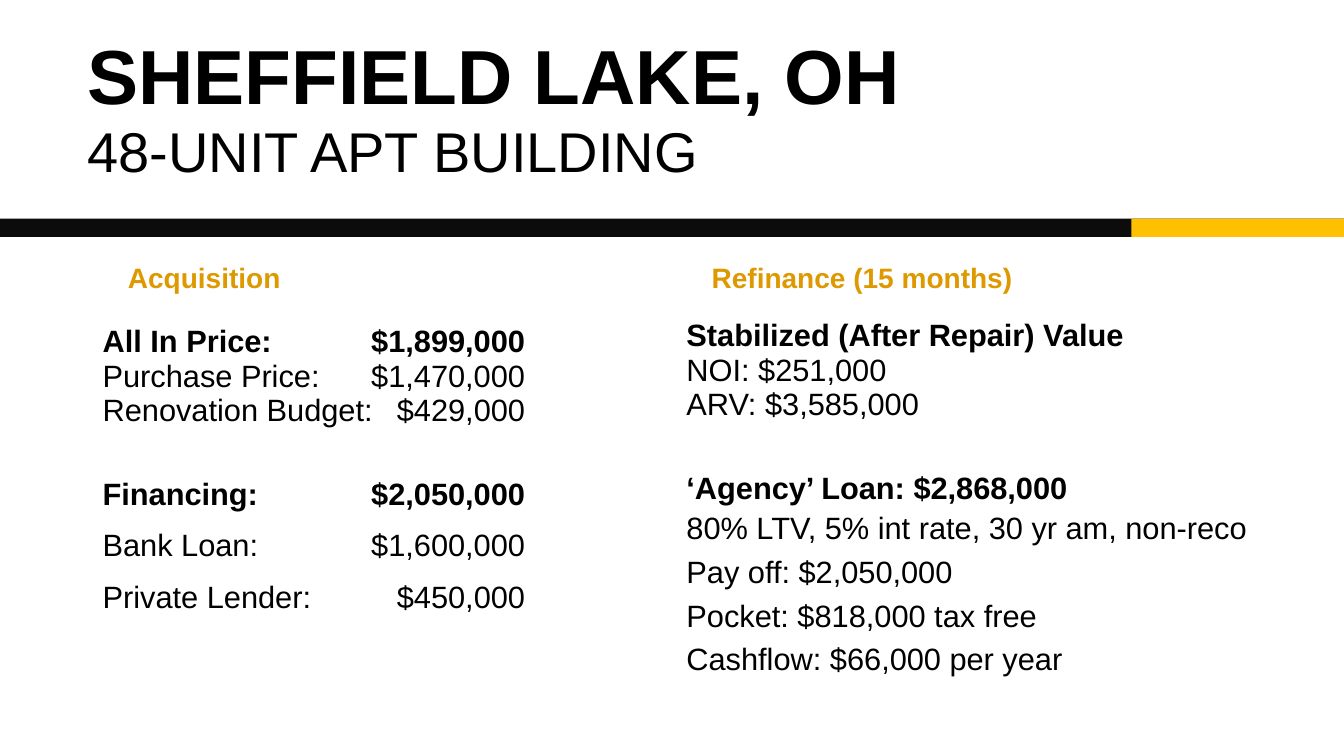
"""Build the apartment acquisition and refinance slide."""
import pptx
import pptx.dml.color
import pptx.enum.shapes
import pptx.enum.text
import pptx.oxml
import pptx.oxml.ns
import pptx.util

Inches = pptx.util.Inches
Pt = pptx.util.Pt
BLACK = pptx.dml.color.RGBColor(0x00, 0x00, 0x00)
CHARCOAL = pptx.dml.color.RGBColor(0x0C, 0x0C, 0x0C)
GOLD = pptx.dml.color.RGBColor(0xDE, 0x99, 0x00)
AMBER = pptx.dml.color.RGBColor(0xFF, 0xC0, 0x00)

TITLE = [("SHEFFIELD LAKE, OH", True, 0, 54.7), ("48-UNIT APT BUILDING", False, 0, 40)]
ACQUISITION = [
    ("All In Price:\t$1,899,000", True, 0),
    ("Purchase Price:\t$1,470,000", False, 0),
    ("Renovation Budget:\t$429,000", False, 0),
    ("Financing:\t$2,050,000", True, 35.5),
    ("Bank Loan:\t$1,600,000", False, 12),
    ("Private Lender:\t$450,000", False, 12),
]
REFINANCE = [
    ("Stabilized (After Repair) Value", True, 0),
    ("NOI: $251,000", False, 0),
    ("ARV: $3,585,000", False, 0),
    ("‘Agency’ Loan: $2,868,000", True, 35.5),
    ("80% LTV, 5% int rate, 30 yr am, non-reco", False, 4),
    ("Pay off: $2,050,000", False, 6.7),
    ("Pocket: $818,000 tax free", False, 6.7),
    ("Cashflow: $66,000 per year", False, 6.7),
]
COLUMNS = [
    ("Acquisition", ACQUISITION, 0.92, 3.18, 5.2, 3.6),
    ("Refinance (15 months)", REFINANCE, 6.71, 3.12, 6.62, 4.24),
]
BARS = [(0, 13.33, CHARCOAL), (11.22, 2.11, AMBER)]
BAR_TOP, BAR_HEIGHT = 2.17, 0.18
HEADING_INDENT = 0.25
AMOUNT_EDGE = 4.19


def add_text(slide, lines, box, size=22, color=BLACK, middle=False, spacing=0.93):
    """Add a text box holding (text, bold, space before[, size]) lines."""
    frame = slide.shapes.add_textbox(*map(Inches, box)).text_frame
    frame.word_wrap = True
    anchor = pptx.enum.text.MSO_ANCHOR
    frame.vertical_anchor = anchor.MIDDLE if middle else anchor.TOP
    for index, (text, bold, before, *own_size) in enumerate(lines):
        paragraph = frame.add_paragraph() if index else frame.paragraphs[0]
        paragraph.line_spacing = spacing
        paragraph.space_before = Pt(before)
        if "\t" in text:
            add_amount_tab(paragraph)
        run = paragraph.add_run()
        run.text = text
        run.font.name = "Arial"
        run.font.size = Pt(own_size[0] if own_size else size)
        run.font.bold = bold
        run.font.color.rgb = color


def add_amount_tab(paragraph):
    """Set the right-aligned tab stop for dollar amounts."""
    properties = paragraph._p.get_or_add_pPr()
    stops = pptx.oxml.parse_xml(
        f'<a:tabLst {pptx.oxml.ns.nsdecls("a")}>'
        f'<a:tab pos="{Inches(AMOUNT_EDGE)}" algn="r"/></a:tabLst>'
    )
    properties.append(stops)


def main():
    """Create and save the slide."""
    presentation = pptx.Presentation()
    presentation.slide_width = Inches(13.33)
    presentation.slide_height = Inches(7.5)
    slide = presentation.slides.add_slide(presentation.slide_layouts[6])

    for left, width, color in BARS:
        bar = slide.shapes.add_shape(
            pptx.enum.shapes.MSO_SHAPE.RECTANGLE,
            *map(Inches, (left, BAR_TOP, width, BAR_HEIGHT)),
        )
        bar.shadow.inherit = False
        bar.fill.solid()
        bar.fill.fore_color.rgb = color
        bar.line.fill.background()

    add_text(slide, TITLE, (0.77, 0.21, 11, 1.76), middle=True, spacing=0.95)
    for heading, lines, left, top, width, height in COLUMNS:
        add_text(slide, [(heading, True, 0)], (left + HEADING_INDENT, 2.42, 5.2, 0.7),
                 size=20, color=GOLD, middle=True)
        add_text(slide, lines, (left, top, width, height))
    presentation.save("out.pptx")


if __name__ == "__main__":
    main()
